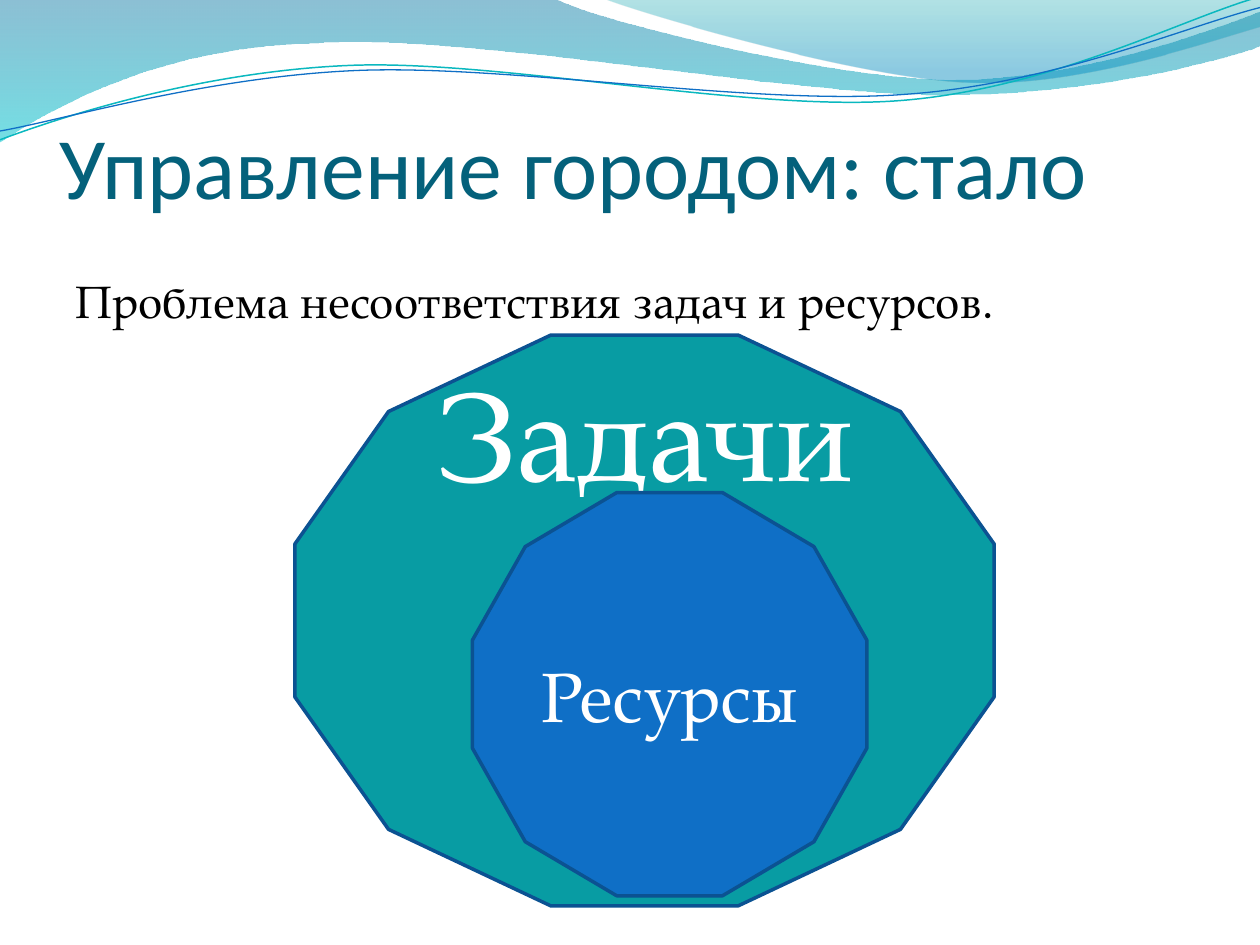
from lxml import etree
from pptx import Presentation
from pptx.dml.color import RGBColor as RGB
from pptx.enum.shapes import MSO_SHAPE as Shape
from pptx.enum.text import MSO_ANCHOR as Anchor, PP_ALIGN as Align
from pptx.oxml.ns import qn
from pptx.util import Inches, Pt

COLORS = {
    "title": "04617B", "body": "000000", "white": "FFFFFF",
    "tasks": "089CA3", "means": "0F6FC6", "edge": "0B5292",
    "blue": "0074A1", "cyan": "00C6CF", "teal": "00A1A9", "sky": "008BBF",
    "curve1": "0AB8BF", "curve2": "0F6FC6",
}
SERIF = "TeX Gyre Pagella"

prs = Presentation()
prs.slide_width, prs.slide_height = Inches(10), Inches(7.5)
slide = prs.slides.add_slide(prs.slide_layouts[6])
shapes = slide.shapes


def trace(start, parts, close):
    """Draw an outline from lines (2 numbers) and Bezier curves (6 numbers)."""
    pts = [(Inches(p[i]), Inches(p[i + 1])) for p in parts for i in range(0, len(p), 2)]
    pen = shapes.build_freeform(*map(Inches, start))
    pen.add_line_segments(pts, close=close)
    shape = pen.convert_to_shape()
    shape.shadow.inherit = False
    # Merge the three points of each curve into one Bezier segment
    lines = iter(list(shape._element.iter(qn("a:lnTo"))))
    for part in parts:
        line = next(lines)
        if len(part) == 6:
            line.tag = qn("a:cubicBezTo")
            for _ in range(2):
                extra = next(lines)
                line.append(extra[0])
                extra.getparent().remove(extra)
    return shape


def write(frame, text, size, font, color):
    """Put one styled paragraph into a text frame."""
    frame.word_wrap = True
    para = frame.paragraphs[0]
    para.text = text
    para.font.size, para.font.name = Pt(size), font
    para.font.color.rgb = RGB.from_string(COLORS[color])
    return para


# Translucent waves: start, outline, gradient stops (place, colour, opacity)
waves = [
    ((0, 0),
     [(4.4, -0.01), (4.76, 0.17, 6.64, 0.63, 7.58, 0.63),
      (8.53, 0.63, 9.58, 0.26, 10, 0.09), (10.01, 0.36),
      (9.83, 0.44, 8.7, 0.76, 7.46, 0.75), (6.22, 0.75, 3.82, 0.28, 2.57, 0.34),
      (1.29, 0.36, 0.46, 0.83, -0.01, 1.13), (0, 0)],
     [(0, "blue", 45), (1, "cyan", 55)]),
    ((4.79, -0.01),
     [(5.09, 0.11, 6.82, 0.62, 7.69, 0.65), (8.56, 0.69, 9.61, 0.32, 10, 0.21),
      (10, 0), (4.79, -0.01)],
     [(0, "teal", 30), (0.8, "sky", 45)]),
]
for start, parts, stops in waves:
    wave = trace(start, parts, True)
    wave.line.fill.background()
    wave.fill.gradient()
    wave.fill.gradient_angle = 270
    for stop, (place, color, alpha) in zip(wave.fill.gradient_stops, stops):
        stop.position = place
        stop.color.rgb = RGB.from_string(COLORS[color])
    tags = wave._element.iter(qn("a:srgbClr"))
    for tag, (place, color, alpha) in zip(tags, stops):
        etree.SubElement(tag, qn("a:alpha")).set("val", str(alpha * 1000))

# Thin curves
curves = [
    ((0, 1.11),
     [(0.48, 0.93, 1.58, 0.57, 2.77, 0.52), (3.95, 0.47, 5.93, 0.89, 7.13, 0.8),
      (8.33, 0.71, 9.38, 0.15, 9.98, -0.02)], "curve1", 0.85),
    ((0, 1.04),
     [(0.47, 0.96, 1.64, 0.61, 2.83, 0.56), (4.03, 0.51, 5.97, 0.84, 7.17, 0.75),
      (8.36, 0.67, 9.41, 0.21, 10, 0.06)], "curve2", 0.75),
]
for start, parts, color, width in curves:
    curve = trace(start, parts, False)
    curve.fill.background()
    curve.line.color.rgb = RGB.from_string(COLORS[color])
    curve.line.width = Pt(width)

# Title
title = shapes.add_textbox(Inches(0.47), Inches(0.47), Inches(9), Inches(1.25)).text_frame
title.vertical_anchor = Anchor.BOTTOM
title.margin_left = title.margin_right = title.margin_bottom = 0
write(title, "Управление городом: стало", 50, "Calibri", "title")

# Body
body = shapes.add_textbox(Inches(0.5), Inches(2.12), Inches(9), Inches(4.8)).text_frame
para = write(body, "Проблема несоответствия задач и ресурсов.", 26, SERIF, "body")
para.space_before = Pt(5.2)

# Nested dodecagons; the bottom inset lifts the outer label above the inner shape
rings = [
    ("Задачи", 72, "tasks", (2.34, 2.66, 5.55, 4.53), 3.05),
    ("Ресурсы", 40, "means", (3.75, 3.91, 3.13, 3.2), 0.05),
]
for text, size, color, box, inset in rings:
    ring = shapes.add_shape(Shape.DODECAGON, *map(Inches, box))
    ring.shadow.inherit = False
    ring.fill.solid()
    ring.fill.fore_color.rgb = RGB.from_string(COLORS[color])
    ring.line.color.rgb = RGB.from_string(COLORS["edge"])
    ring.line.width = Pt(2)
    ring.text_frame.vertical_anchor = Anchor.MIDDLE
    ring.text_frame.margin_bottom = Inches(inset)
    write(ring.text_frame, text, size, SERIF, "white").alignment = Align.CENTER

prs.save("out.pptx")
